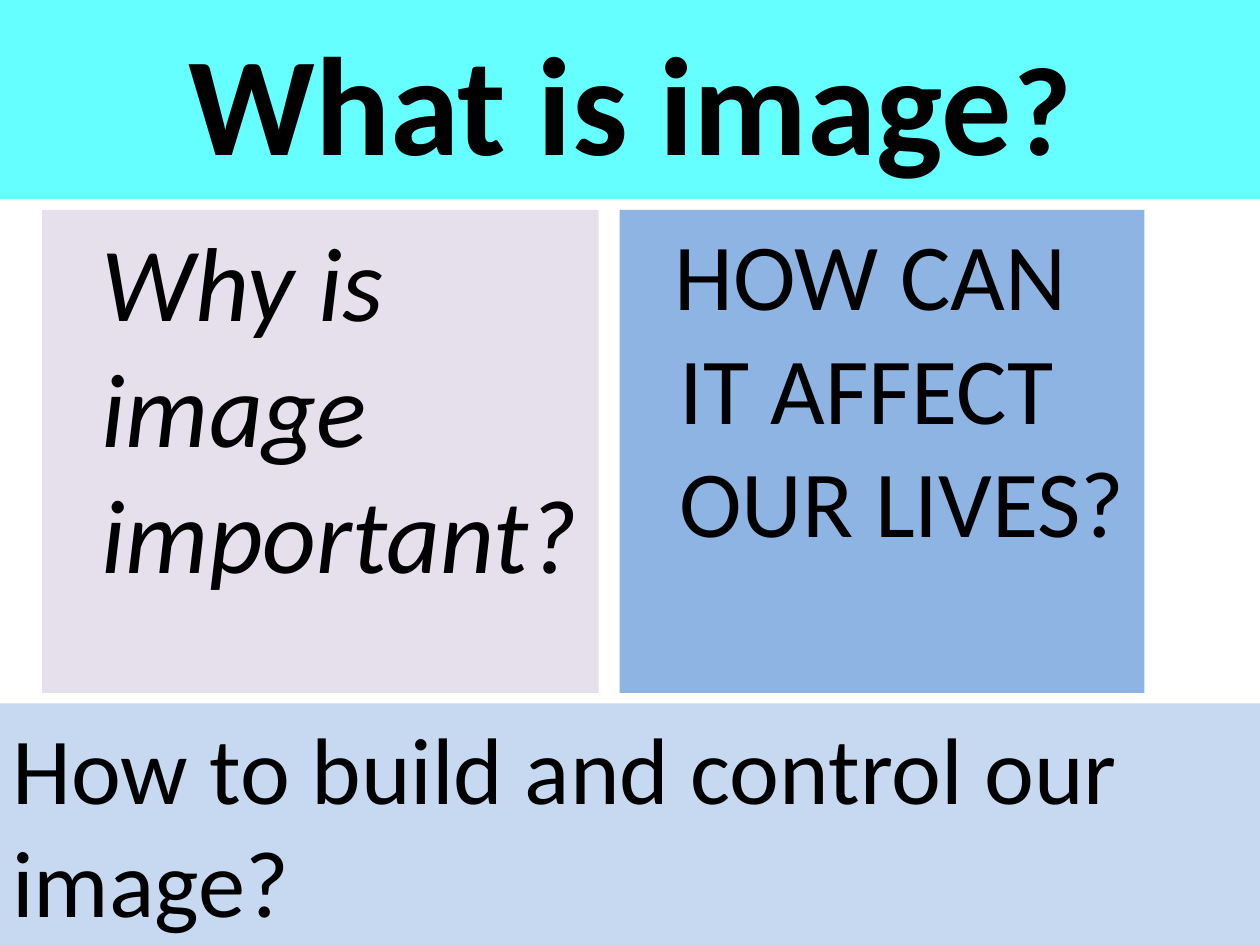
from dataclasses import dataclass

from lxml.etree import SubElement
from pptx import Presentation
from pptx.dml.color import RGBColor
from pptx.enum.text import MSO_ANCHOR as Anchor, MSO_AUTO_SIZE as Fit, PP_ALIGN as Align
from pptx.oxml.ns import qn
from pptx.util import Cm, Pt

BLACK = RGBColor(0x00, 0x00, 0x00)
CYAN = RGBColor(0x66, 0xFF, 0xFF)
LILAC = RGBColor(0xE6, 0xE0, 0xEC)
BLUE = RGBColor(0x8E, 0xB4, 0xE3)
PALE = RGBColor(0xC6, 0xD9, 0xF1)

WIDE = 25.4
TOP = 4.23
TALL = 9.74


@dataclass
class Panel:
    left: float
    top: float
    width: float
    height: float
    fill: RGBColor


def place(shape, panel: Panel, anchor=Anchor.TOP):
    shape.left, shape.top = Cm(panel.left), Cm(panel.top)
    shape.width, shape.height = Cm(panel.width), Cm(panel.height)
    shape.fill.solid()
    shape.fill.fore_color.rgb = panel.fill
    frame = shape.text_frame
    frame.word_wrap = True
    frame.auto_size = Fit.NONE
    frame.vertical_anchor = anchor
    return frame.paragraphs[0]


def write(para, text: str, *, size: int, bold=False, italic=False,
          align=Align.LEFT) -> None:
    para.alignment = align
    para.space_before = Pt(0)
    run = para.add_run()
    run.text = text
    font = run.font
    font.name = "Calibri"
    font.size = Pt(size)
    font.bold = bold
    font.italic = italic
    font.color.rgb = BLACK


def indent(para, left: float, first: float) -> None:
    props = para._p.get_or_add_pPr()
    props.set("marL", str(Cm(left)))
    props.set("indent", str(Cm(first)))
    SubElement(props, qn("a:buNone"))


def main() -> None:
    deck = Presentation()
    deck.slide_width, deck.slide_height = Cm(WIDE), Cm(19.05)
    slide = deck.slides.add_slide(deck.slide_layouts[3])
    title, why, how = slide.placeholders

    head = place(title, Panel(0, 0, WIDE, 4.01, CYAN), Anchor.MIDDLE)
    write(head, "What is image", size=80, bold=True, align=Align.CENTER)
    write(head, "?", size=72, bold=True, align=Align.CENTER)

    para = place(why, Panel(0.85, TOP, 11.22, TALL, LILAC))
    indent(para, 0.95, 0)
    write(para, "Why is image important?", size=60, italic=True)

    para = place(how, Panel(12.49, TOP, 10.58, TALL, BLUE))
    indent(para, 0.95, -0.1)
    write(para, "HOW CAN IT AFFECT OUR LIVES?", size=54)

    foot = slide.shapes.add_textbox(0, 0, 0, 0)
    para = place(foot, Panel(0, 14.18, WIDE, 4.87, PALE))
    write(para, "How to build and control our image?", size=54)

    deck.save("out.pptx")


if __name__ == "__main__":
    main()
